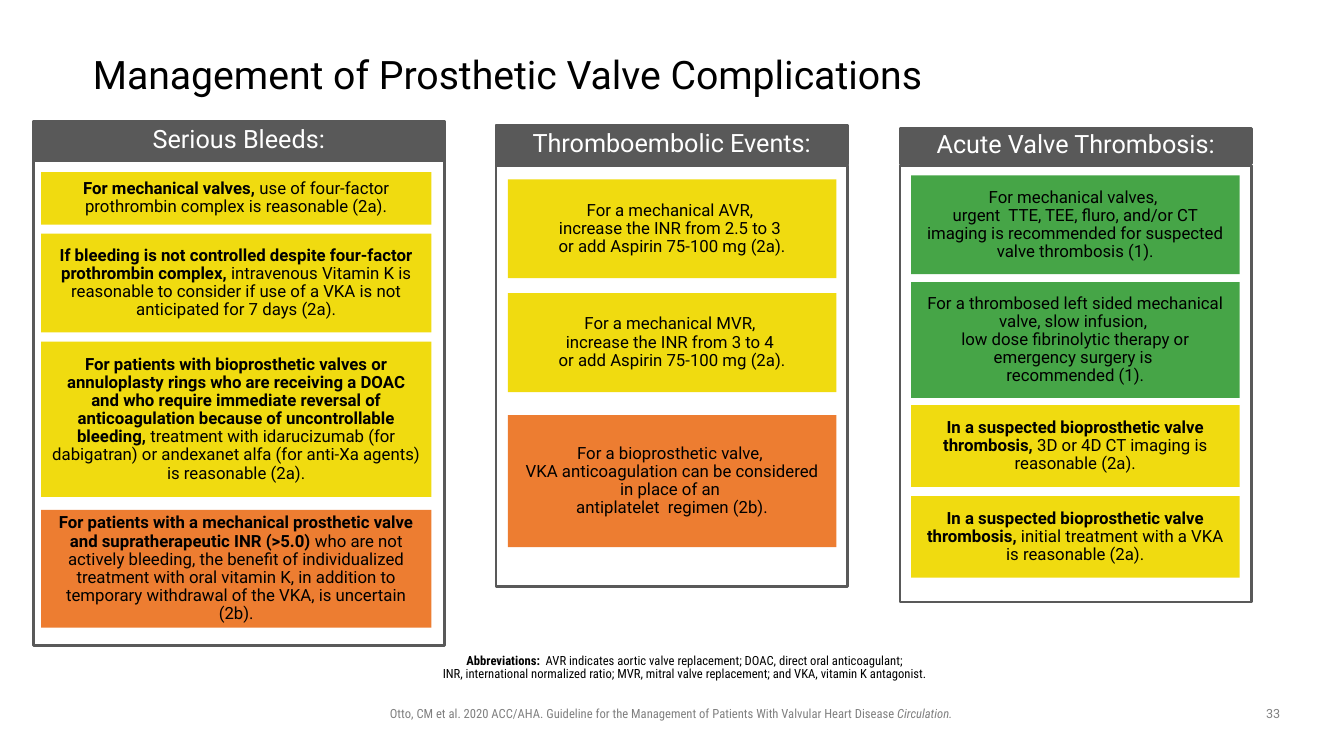
from pptx import Presentation
from pptx.dml.color import RGBColor
from pptx.enum.shapes import MSO_SHAPE as Shape
from pptx.enum.text import MSO_ANCHOR as Anchor, PP_ALIGN as Align
from pptx.util import Cm, Pt

COLORS = {"white": "FFFFFF", "black": "000000", "gray": "595959", "footer": "808080",
          "yellow": "F0DB10", "orange": "ED7D31", "green": "46A547"}
BODY, NARROW = "Roboto", "Roboto Condensed"

TITLE = "Management of Prosthetic Valve Complications"
ABBREVIATIONS = [
    ("Abbreviations:  ", "b"),
    ("AVR indicates aortic valve replacement; DOAC, direct oral anticoagulant;\n"
     "INR, international normalized ratio; MVR, mitral valve replacement; "
     "and VKA, vitamin K antagonist.", "")]
CITATION = [
    ("Otto, CM et al. 2020 ACC/AHA. Guideline for the Management of Patients "
     "With Valvular Heart Disease ", ""),
    ("Circulation.", "i")]
PAGE = "33"

# Each card: top, height, colour, bold lead, remaining text.
COLUMNS = [
    {"heading": "Serious Bleeds:", "left": 0.84, "width": 10.36,
     "head": (3.05, 0.99), "frame": (3.94, 12.32), "card_left": 1.04, "card_width": 9.83,
     "cards": [
         (4.34, 1.32, "yellow", "For mechanical valves, ",
          "use of four-factor prothrombin complex is reasonable (2a)."),
         (5.89, 2.49, "yellow",
          "If bleeding is not controlled despite four-factor prothrombin complex, ",
          "intravenous Vitamin K is reasonable to consider if use of a VKA is not "
          "anticipated for 7 days (2a)."),
         (8.61, 3.91, "yellow",
          "For patients with bioprosthetic valves or annuloplasty rings who are receiving "
          "a DOAC and who require immediate reversal of anticoagulation because of "
          "uncontrollable bleeding, ",
          "treatment with idarucizumab (for dabigatran) or andexanet alfa "
          "(for anti-Xa agents) is reasonable (2a)."),
         (12.85, 2.97, "orange",
          "For patients with a mechanical prosthetic valve and supratherapeutic INR (>5.0) ",
          "who are not actively bleeding, the benefit of individualized treatment with oral "
          "vitamin K, in addition to temporary withdrawal of the VKA, is uncertain (2b).")]},
    {"heading": "Thromboembolic Events:", "left": 12.5, "width": 8.86,
     "head": (3.15, 0.99), "frame": (4.17, 10.62), "card_left": 12.8, "card_width": 8.28,
     "cards": [
         (4.52, 2.49, "yellow", "",
          "For a mechanical AVR, \nincrease the INR from 2.5 to 3 \n"
          "or add Aspirin 75-100 mg (2a)."),
         (7.39, 2.49, "yellow", "",
          "For a mechanical MVR, \nincrease the INR from 3 to 4 \n"
          "or add Aspirin 75-100 mg (2a)."),
         (10.46, 3.33, "orange", "",
          "For a bioprosthetic valve, \nVKA anticoagulation can be considered in place of an \n"
          "antiplatelet  regimen (2b).")]},
    {"heading": "Acute Valve Thrombosis:", "left": 22.68, "width": 8.86,
     "head": (3.23, 0.89), "frame": (4.17, 11), "card_left": 22.96, "card_width": 8.28,
     "cards": [
         (4.42, 2.49, "green", "",
          "For mechanical valves, \nurgent  TTE, TEE, fluro, and/or CT imaging is "
          "recommended for suspected valve thrombosis (1)."),
         (7.11, 2.92, "green", "",
          "For a thrombosed left sided mechanical valve, slow infusion, \n"
          "low dose fibrinolytic therapy or emergency surgery is \nrecommended (1)."),
         (10.21, 2.06, "yellow", "In a suspected bioprosthetic valve thrombosis, ",
          "3D or 4D CT imaging is reasonable (2a)."),
         (12.5, 2.06, "yellow", "In a suspected bioprosthetic valve thrombosis, ",
          "initial treatment with a VKA is reasonable (2a).")]},
]


def rgb(name):
    return RGBColor.from_string(COLORS[name])


def add_box(s, at, fill, line=None):
    sp = s.shapes.add_shape(Shape.RECTANGLE, *map(Cm, at))
    sp.shadow.inherit = False
    sp.fill.solid()
    sp.fill.fore_color.rgb = rgb(fill)
    if line:
        sp.line.color.rgb = rgb(line)
        sp.line.width = Pt(2)
    else:
        sp.line.fill.background()
    return sp


def write(sp, text, size=12, font=BODY, color="black", align=Align.CENTER,
          anchor=Anchor.MIDDLE, spacing=0.9, insets=(0, 0, 0, 0)):
    tf = sp.text_frame
    tf.word_wrap = True
    tf.vertical_anchor = anchor
    tf.margin_left, tf.margin_top, tf.margin_right, tf.margin_bottom = map(Cm, insets)
    p = tf.paragraphs[0]
    p.alignment, p.line_spacing = align, spacing
    for part, style in [(text, "")] if isinstance(text, str) else text:
        for i, row in enumerate(part.split("\n")):
            if i:
                p.add_line_break()
            r = p.add_run()
            r.text = row
            r.font.size, r.font.name = Pt(size), font
            r.font.bold, r.font.italic = style == "b", style == "i"
            r.font.color.rgb = rgb(color)


def add_text(s, at, text, **style):
    write(s.shapes.add_textbox(*map(Cm, at)), text, **style)


def add_column(s, col):
    left, width = col["left"], col["width"]
    for span, fill, text in ((col["frame"], "white", ""), (col["head"], "gray", col["heading"])):
        top, height = span
        sp = add_box(s, (left, top, width, height), fill, line="gray")
        if text:
            write(sp, text, size=18, color="white")
    for top, height, fill, lead, rest in col["cards"]:
        sp = add_box(s, (col["card_left"], top, col["card_width"], height), fill)
        write(sp, [(lead, "b"), (rest, "")] if lead else rest, insets=(0.25,) * 4)


def main():
    """Build the prosthetic valve complications slide."""
    prs = Presentation()
    prs.slide_width, prs.slide_height = Cm(33.87), Cm(19.05)
    s = prs.slides.add_slide(prs.slide_layouts[6])
    add_text(s, (2.34, 1.02, 29.21, 1.83), TITLE, size=28, align=Align.LEFT)
    for col in COLUMNS:
        add_column(s, col)
    add_text(s, (10.34, 16.36, 14.07, 0.76), ABBREVIATIONS, size=9, font=NARROW,
             anchor=Anchor.TOP, insets=(0, 0.13, 0.25, 0.13))
    footer = dict(size=9, color="footer", anchor=Anchor.TOP, spacing=1.0,
                  insets=(0.25, 0.13, 0.25, 0.13))
    add_text(s, (8.05, 17.65, 17.73, 0.64), CITATION, font=NARROW, **footer)
    add_text(s, (31.55, 17.65, 1.07, 0.66), PAGE, **footer)
    prs.save("out.pptx")


if __name__ == "__main__":
    main()
